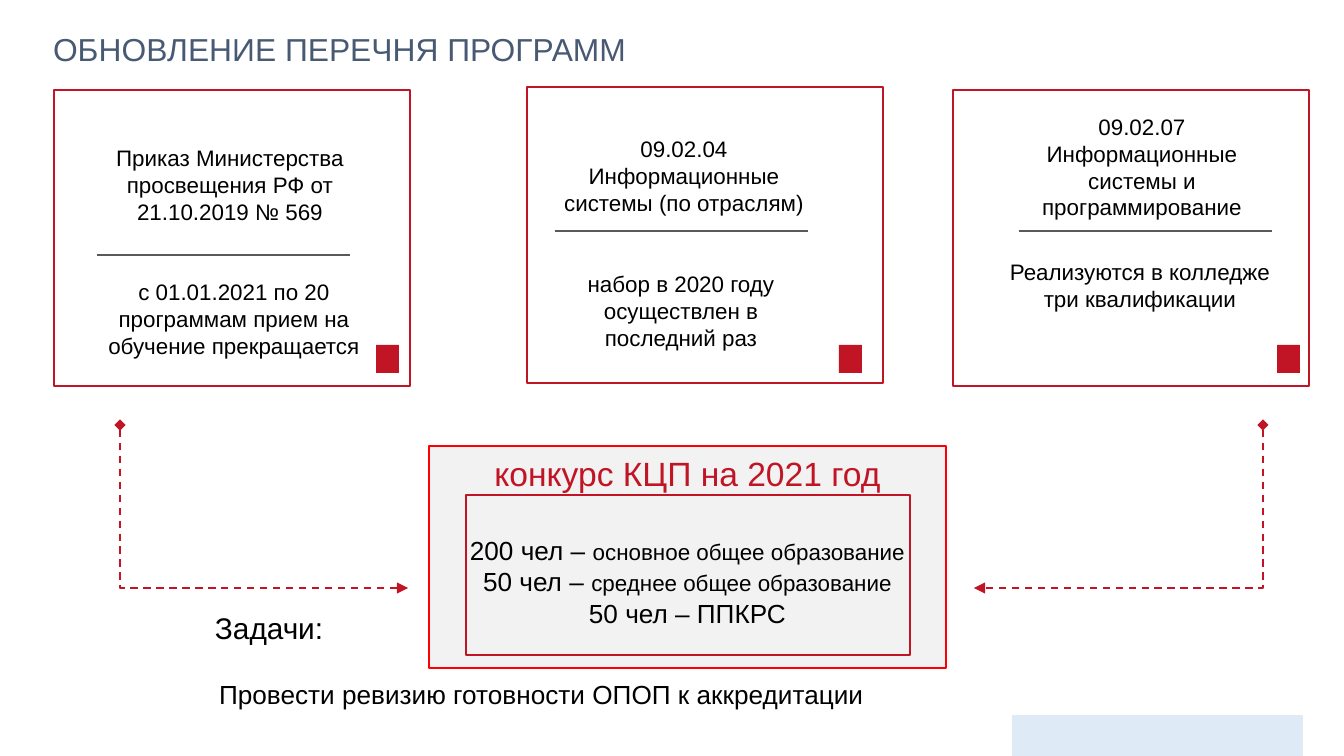
from lxml.etree import SubElement
from pptx import Presentation
from pptx.dml.color import RGBColor
from pptx.enum.dml import MSO_LINE_DASH_STYLE as Dash
from pptx.enum.shapes import MSO_CONNECTOR, MSO_SHAPE
from pptx.enum.text import MSO_ANCHOR, MSO_AUTO_SIZE, PP_ALIGN
from pptx.oxml.ns import qn
from pptx.util import Pt

PX = 914400 / 134.4
FONT = "Arial"
RED = RGBColor(0xC1, 0x15, 0x26)
BRIGHT_RED = RGBColor(0xFF, 0x00, 0x00)
SLATE = RGBColor(0x48, 0x5A, 0x73)
GRAY = RGBColor(0x59, 0x59, 0x59)
LIGHT_GRAY = RGBColor(0xF2, 0xF2, 0xF2)
PALE_BLUE = RGBColor(0xDE, 0xEB, 0xF7)
BLACK = RGBColor(0, 0, 0)

# Content: positions in px
TITLE = "ОБНОВЛЕНИЕ ПЕРЕЧНЯ ПРОГРАММ"
CARD_SIZE = (356, 296)
MARK_TOP, MARK_SIZE = 345, (23, 28)
RULE_LENGTH = 253
CARD_TEXT_WIDTH = 290
CARDS = [
    {"corner": (54, 90), "mark": 376, "rule": (97, 255), "texts": [
        (85, 137, 95, "Приказ Министерства просвещения РФ от 21.10.2019 № 569"),
        (89, 271, 95, "с 01.01.2021 по 20 программам прием на обучение прекращается")]},
    {"corner": (527, 87), "mark": 839, "rule": (555, 231), "texts": [
        (539, 128, 95, "09.02.04 Информационные системы (по отраслям)"),
        (536, 263, 95, "набор в 2020 году осуществлен в последний раз")]},
    {"corner": (953, 90), "mark": 1277, "rule": (1019, 231), "texts": [
        (997, 106, 122, "09.02.07 Информационные системы и программирование"),
        (995, 251, 67, "Реализуются в колледже три квалификации")]},
]
CONTEST = [
    [("конкурс КЦП на 2021 год", 18, RED)],
    [("200 чел – ", 14, BLACK), ("основное общее образование", 12, BLACK)],
    [("50 чел – ", 14, BLACK), ("среднее общее образование", 12, BLACK)],
    [("50 чел – ППКРС", 14, BLACK)],
]
ARROWS = [(120, 408), (1263, 974)]
ARROW_TOP, ARROW_BOTTOM = 425, 588
TASKS = [
    ((202, 603, 314, 86), "Задачи:", 16),
    ((206, 671, 1120, 46), "Провести ревизию готовности ОПОП к аккредитации", 14),
]


def px(*lengths):
    return [round(length * PX) for length in lengths]


def write(shape, paragraphs, size=12, color=BLACK, align=PP_ALIGN.LEFT,
          anchor=MSO_ANCHOR.TOP, margins=(13, 7), spacing=None, gap=0):
    """Fill a shape with a string or with paragraphs of (text, size, colour) runs."""
    if isinstance(paragraphs, str):
        paragraphs = [[(paragraphs, size, color)]]
    frame = shape.text_frame
    frame.word_wrap = True
    frame.auto_size = MSO_AUTO_SIZE.NONE
    frame.vertical_anchor = anchor
    frame.margin_left = frame.margin_right = px(margins[0])[0]
    frame.margin_top = frame.margin_bottom = px(margins[1])[0]
    for index, runs in enumerate(paragraphs):
        paragraph = frame.add_paragraph() if index else frame.paragraphs[0]
        paragraph.alignment = align
        if spacing:
            paragraph.line_spacing = spacing
        if index == 1 and gap:
            paragraph.space_before = Pt(gap)
        for text, run_size, run_color in runs:
            run = paragraph.add_run()
            run.text = text
            run.font.name = FONT
            run.font.size = Pt(run_size)
            run.font.color.rgb = run_color


def add_text(slide, box, text, **style):
    write(slide.shapes.add_textbox(*px(*box)), text, **style)


def add_box(slide, box, fill=None, line=None, width=1):
    shape = slide.shapes.add_shape(MSO_SHAPE.RECTANGLE, *px(*box))
    shape.shadow.inherit = False
    if fill is None:
        shape.fill.background()
    else:
        shape.fill.solid()
        shape.fill.fore_color.rgb = fill
    if line is None:
        shape.line.fill.background()
    else:
        shape.line.color.rgb = line
        shape.line.width = Pt(width)
    return shape


def add_rule(slide, left, top):
    rule = slide.shapes.add_connector(
        MSO_CONNECTOR.STRAIGHT, *px(left, top, left + RULE_LENGTH, top))
    rule.line.color.rgb = GRAY
    rule.line.width = Pt(0.75)
    SubElement(rule._element.spPr, qn("a:effectLst"))


def add_arrow(slide, start_x, end_x):
    builder = slide.shapes.build_freeform(*px(start_x, ARROW_TOP))
    builder.add_line_segments(
        [px(start_x, ARROW_BOTTOM), px(end_x, ARROW_BOTTOM)], close=False)
    arrow = builder.convert_to_shape()
    arrow.shadow.inherit = False
    arrow.fill.background()
    arrow.line.color.rgb = RED
    arrow.line.width = Pt(1)
    arrow.line.dash_style = Dash.DASH
    outline = arrow.line._get_or_add_ln()
    SubElement(outline, qn("a:headEnd"), type="diamond")
    SubElement(outline, qn("a:tailEnd"), type="triangle")


def main():
    presentation = Presentation()
    presentation.slide_width, presentation.slide_height = px(1344, 756)
    slide = presentation.slides.add_slide(presentation.slide_layouts[5])

    # Title
    title = slide.shapes.title
    title.left, title.top, title.width, title.height = px(40, 27, 790, 48)
    write(title, TITLE, size=17, color=SLATE, anchor=MSO_ANCHOR.MIDDLE, spacing=0.9)

    # Programme cards
    for card in CARDS:
        add_box(slide, (*card["corner"], *CARD_SIZE), line=RED)
        add_box(slide, (card["mark"], MARK_TOP, *MARK_SIZE), fill=RED)
        add_rule(slide, *card["rule"])
        for left, top, height, text in card["texts"]:
            add_text(slide, (left, top, CARD_TEXT_WIDTH, height), text,
                     align=PP_ALIGN.CENTER)

    # Contest panel with its inner frame
    panel = add_box(slide, (429, 446, 517, 222), LIGHT_GRAY, BRIGHT_RED, 0.75)
    write(panel, CONTEST, align=PP_ALIGN.CENTER, gap=22)
    add_box(slide, (466, 495, 444, 160), line=RED)

    # Dashed arrows towards the panel
    for start_x, end_x in ARROWS:
        add_arrow(slide, start_x, end_x)

    # Tasks and the corner block
    add_box(slide, (1013, 716, 289, 40), PALE_BLUE, PALE_BLUE)
    for box, text, size in TASKS:
        add_text(slide, box, text, size=size)

    presentation.save("out.pptx")


if __name__ == "__main__":
    main()
